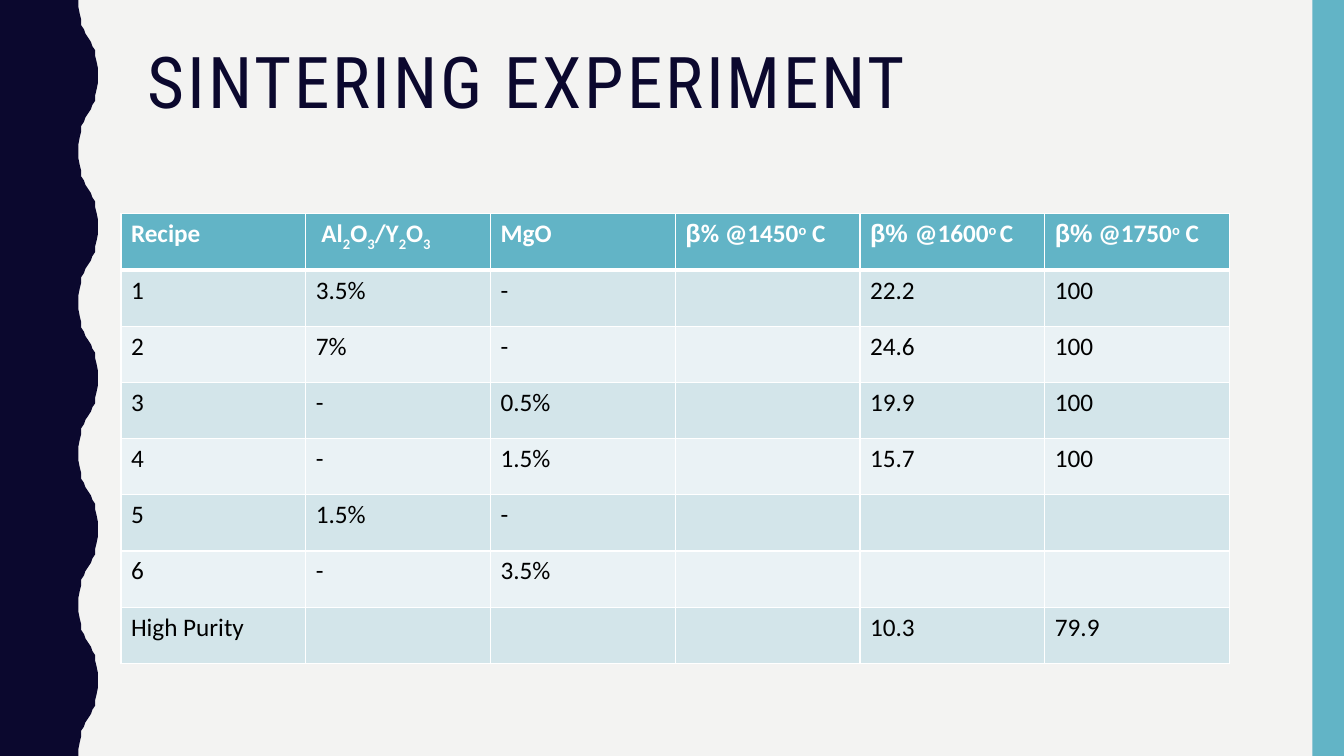
"""Build the sintering experiment slide with its table of recipes."""
from dataclasses import dataclass
from typing import NamedTuple

from lxml import etree
from pptx import Presentation
from pptx import util as u
from pptx.dml.color import RGBColor
from pptx.enum import shapes, text
from pptx.oxml import ns


@dataclass(frozen=True)
class Theme:
    paper: str = "F3F3F2"
    navy: str = "0B082E"
    teal: str = "62B4C6"
    band_dark: str = "D3E5EA"
    band_light: str = "EAF2F5"
    white: str = "FFFFFF"
    black: str = "000000"
    title_font: str = "Roboto Condensed"
    body_font: str = "Calibri"
    greek_font: str = "Arial"
    title_size: float = 51
    body_size: float = 18


class Run(NamedTuple):
    text: str
    baseline: int = 0
    font: str = Theme.body_font


class CellStyle(NamedTuple):
    fill: str
    color: str
    bold: bool
    top: float
    bottom: float


THEME = Theme()
WIDTH, HEIGHT = 960, 540
WAVE_PERIOD, WAVE_CENTER = 108, 63
QUARTER_WAVE = [(56.2, 0), (56.3, 5), (56.9, 10), (57.6, 14.4),
                (58.5, 18), (59.8, 21), (61.3, 24), (63, 27)]
TABLE_LEFT, TABLE_TOP = 86.4, 152.7
COLUMN_WIDTH, ROW_HEIGHT = 132, 40.14
SUB, SUP = -25, 30

HEADER = [
    [Run("Recipe")],
    [Run(" Al"), Run("2", SUB), Run("O"), Run("3", SUB),
     Run("/Y"), Run("2", SUB), Run("O"), Run("3", SUB)],
    [Run("MgO")],
    [Run("β", font=THEME.greek_font), Run("% @1450"), Run("o", SUP), Run(" C")],
    [Run("β% ", font=THEME.greek_font), Run("@1600"), Run("o ", SUP), Run("C")],
    [Run("β%", font=THEME.greek_font), Run(" @1750"), Run("o", SUP), Run(" C")],
]
RECIPES = [
    ("1", "3.5%", "-", "", "22.2", "100"),
    ("2", "7%", "-", "", "24.6", "100"),
    ("3", "-", "0.5%", "", "19.9", "100"),
    ("4", "-", "1.5%", "", "15.7", "100"),
    ("5", "1.5%", "-", "", "", ""),
    ("6", "-", "3.5%", "", "", ""),
    ("High Purity", "", "", "", "10.3", "79.9"),
]


def rgb(color: str) -> RGBColor:
    return RGBColor.from_string(color)


def paint(sp, color: str) -> None:
    sp.fill.solid()
    sp.fill.fore_color.rgb = rgb(color)
    sp.line.fill.background()
    sp.shadow.inherit = False


def wave_points() -> list[tuple[float, float]]:
    half = WAVE_PERIOD / 2
    rise = QUARTER_WAVE + [(2 * WAVE_CENTER - x, half - y)
                           for x, y in reversed(QUARTER_WAVE[:-1])]
    period = rise + [(x, WAVE_PERIOD - y) for x, y in reversed(rise[:-1])]
    return [(x, y + top) for top in range(0, HEIGHT, WAVE_PERIOD) for x, y in period]


def add_wave(s) -> None:
    builder = s.shapes.build_freeform(0, 0, scale=float(u.Pt(1)))
    builder.add_line_segments(wave_points() + [(0, HEIGHT)], close=True)
    paint(builder.convert_to_shape(), THEME.navy)


def add_side_bar(s) -> None:
    left = 937.5
    sp = s.shapes.add_shape(shapes.MSO_SHAPE.RECTANGLE, u.Pt(left), 0,
                            u.Pt(WIDTH - left), u.Pt(HEIGHT))
    paint(sp, THEME.teal)


def add_run(p, run: Run, size: float, color: str, bold: bool = False):
    r = p.add_run()
    r.text = run.text
    r.font.name = run.font
    r.font.size = u.Pt(size)
    r.font.bold = bold
    r.font.color.rgb = rgb(color)
    if run.baseline:
        r.font._element.set("baseline", str(run.baseline * 1000))
    return r


def add_title(s) -> None:
    sp = s.shapes.add_textbox(u.Pt(98.6), u.Pt(30.2), u.Pt(801.4), u.Pt(117.4))
    tf = sp.text_frame
    tf.word_wrap = True
    tf.vertical_anchor = text.MSO_ANCHOR.TOP
    p = tf.paragraphs[0]
    p.line_spacing = 0.9
    r = add_run(p, Run("SINTERING EXPERIMENT", font=THEME.title_font),
                THEME.title_size, THEME.navy)
    r.font._element.set("spc", "200")


def add_borders(cell, style: CellStyle) -> None:
    tc_pr = cell._tc.get_or_add_tcPr()
    sides = {"lnL": 1, "lnR": 1, "lnT": style.top, "lnB": style.bottom}
    for side, width in sides.items():
        line = etree.SubElement(tc_pr, ns.qn(f"a:{side}"), w=str(u.Pt(width)))
        fill = etree.SubElement(line, ns.qn("a:solidFill"))
        etree.SubElement(fill, ns.qn("a:srgbClr"), val=THEME.white)


def fill_cell(cell, runs: list[Run], style: CellStyle) -> None:
    add_borders(cell, style)
    cell.fill.solid()
    cell.fill.fore_color.rgb = rgb(style.fill)
    p = cell.text_frame.paragraphs[0]
    p.font.size = u.Pt(THEME.body_size)
    for run in runs:
        add_run(p, run, THEME.body_size, style.color, style.bold)


def row_style(row: int) -> CellStyle:
    if row == 0:
        return CellStyle(THEME.teal, THEME.white, True, 1, 3)
    band = THEME.band_dark if row % 2 else THEME.band_light
    return CellStyle(band, THEME.black, False, 3 if row == 1 else 1, 1)


def add_recipe_table(s) -> None:
    rows = [HEADER] + [[[Run(value)] if value else [] for value in recipe]
                       for recipe in RECIPES]
    table = s.shapes.add_table(
        len(rows), len(HEADER), u.Pt(TABLE_LEFT), u.Pt(TABLE_TOP),
        u.Pt(COLUMN_WIDTH * len(HEADER)), u.Pt(ROW_HEIGHT * len(rows))).table
    for column in table.columns:
        column.width = u.Pt(COLUMN_WIDTH)
    for i, row in enumerate(rows):
        table.rows[i].height = u.Pt(ROW_HEIGHT)
        for j, runs in enumerate(row):
            fill_cell(table.cell(i, j), runs, row_style(i))


def main() -> None:
    prs = Presentation()
    prs.slide_width, prs.slide_height = u.Pt(WIDTH), u.Pt(HEIGHT)
    s = prs.slides.add_slide(prs.slide_layouts[6])
    s.background.fill.solid()
    s.background.fill.fore_color.rgb = rgb(THEME.paper)
    add_wave(s)
    add_side_bar(s)
    add_title(s)
    add_recipe_table(s)
    prs.save("out.pptx")


if __name__ == "__main__":
    main()
